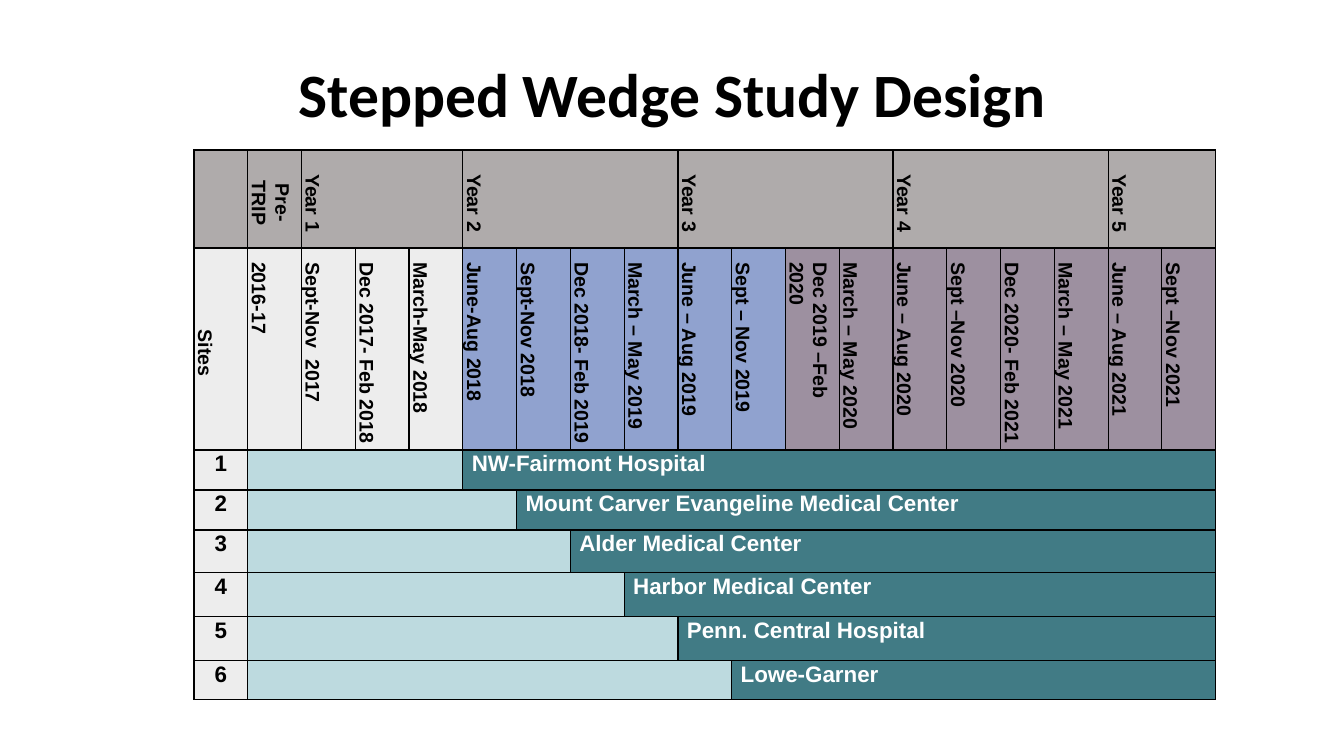
import pptx
import pptx.dml.color
import pptx.enum.text
import pptx.oxml
import pptx.oxml.ns
import pptx.util

PX = 914400 / 100.8
ALIGN = pptx.enum.text.PP_ALIGN
ANCHOR = pptx.enum.text.MSO_ANCHOR
COLORS = {
    "black": "000000", "white": "FFFFFF", "year": "AFABAB", "plain": "EDEDED",
    "rollout": "90A2CF", "followup": "9D90A0", "control": "BDDADF", "active": "417B85",
}

# First column, label and column count of each header group
YEARS = [(0, "", 1), (1, "Pre-TRIP", 1), (2, "Year 1", 3), (5, "Year 2", 4),
         (9, "Year 3", 4), (13, "Year 4", 4), (17, "Year 5", 2)]
PERIODS = [
    ("plain", ["Sites", "2016-17", "Sept-Nov  2017", "Dec 2017- Feb 2018",
               "March-May 2018"]),
    ("rollout", ["June-Aug 2018", "Sept-Nov 2018", "Dec 2018- Feb 2019",
                 "March – May 2019", "June – Aug 2019", "Sept – Nov 2019"]),
    ("followup", ["Dec 2019 –Feb 2020", "March – May 2020", "June – Aug 2020",
                  "Sept –Nov 2020", "Dec 2020- Feb 2021", "March – May 2021",
                  "June – Aug 2021", "Sept –Nov 2021"]),
]
SITES = ["NW-Fairmont Hospital", "Mount Carver Evangeline Medical Center",
         "Alder Medical Center", "Harbor Medical Center",
         "Penn. Central Hospital", "Lowe-Garner"]
COLUMNS = 19
FIRST_STEP = 5
ROW_HEIGHTS = [98, 202, 40, 40, 43, 44, 44, 39]


def emu(px):
    return pptx.util.Emu(round(px * PX))


def rgb(name):
    return pptx.dml.color.RGBColor.from_string(COLORS[name])


def add_span(para, text, size, color="black", font="Arial"):
    span = para.add_run()
    span.text = text
    span.font.size = pptx.util.Pt(size)
    span.font.name = font
    span.font.bold = True
    span.font.color.rgb = rgb(color)


def add_title(page, left, top, width, height):
    box = page.shapes.add_textbox(emu(left), emu(top), emu(width), emu(height))
    frame = box.text_frame
    frame.word_wrap = True
    frame.vertical_anchor = ANCHOR.MIDDLE
    para = frame.paragraphs[0]
    para.alignment = ALIGN.CENTER
    para.line_spacing = 0.9
    add_span(para, "Stepped Wedge Study Design", 44, font="Calibri")


def style_cell(cell):
    cell.margin_left = cell.margin_right = emu(6)
    cell.margin_top = cell.margin_bottom = 0
    properties = cell._tc.get_or_add_tcPr()
    for side in ("lnL", "lnR", "lnT", "lnB"):
        properties.append(pptx.oxml.parse_xml(
            f'<a:{side} {pptx.oxml.ns.nsdecls("a")} w="12700"><a:solidFill>'
            f'<a:srgbClr val="{COLORS["black"]}"/></a:solidFill></a:{side}>'))


def fill_cells(table, row, column, count, fill, text="", size=14, color="black",
               align=ALIGN.LEFT, indent=0, vertical=False, anchor=ANCHOR.TOP):
    for offset in range(count):
        cell = table.cell(row, column + offset)
        cell.fill.solid()
        cell.fill.fore_color.rgb = rgb(fill)
    cell = table.cell(row, column)
    if count > 1:
        cell.merge(table.cell(row, column + count - 1))
    if not text:
        return
    cell.vertical_anchor = anchor
    if vertical:
        cell._tc.get_or_add_tcPr().set("vert", "vert")
    para = cell.text_frame.paragraphs[0]
    para.alignment = align
    para.line_spacing = 1.07
    para._p.get_or_add_pPr().set("marL", str(emu(indent)))
    add_span(para, text, size, color)


def add_schedule(page, left, top, width, height):
    frame = page.shapes.add_table(len(ROW_HEIGHTS), COLUMNS, emu(left), emu(top),
                                  emu(width), emu(height))
    table = frame.table
    table.first_row = table.horz_banding = False
    for column in table.columns:
        column.width = emu(width / COLUMNS)
    for row, row_height in zip(table.rows, ROW_HEIGHTS):
        row.height = emu(row_height)
    for cell in table.iter_cells():
        style_cell(cell)

    # Year header
    for column, label, count in YEARS:
        fill_cells(table, 0, column, count, "year", label, align=ALIGN.CENTER,
                   indent=8, vertical=True, anchor=ANCHOR.MIDDLE)

    # Period header
    periods = [(fill, label) for fill, labels in PERIODS for label in labels]
    for column, (fill, label) in enumerate(periods):
        fill_cells(table, 1, column, 1, fill, label, indent=8, vertical=True,
                   align=ALIGN.LEFT if column else ALIGN.CENTER)

    # Each site starts one period after the site above
    for index, site in enumerate(SITES):
        row, start = index + 2, FIRST_STEP + index
        fill_cells(table, row, 0, 1, "plain", str(index + 1), 16, align=ALIGN.CENTER)
        fill_cells(table, row, 1, start - 1, "control")
        fill_cells(table, row, start, COLUMNS - start, "active", site, 16, "white",
                   indent=3)


def main():
    deck = pptx.Presentation()
    deck.slide_width, deck.slide_height = emu(1344), emu(756)
    page = deck.slides.add_slide(deck.slide_layouts[6])
    add_title(page, 93, 25, 1159, 145)
    add_schedule(page, 194, 150, 1022, sum(ROW_HEIGHTS))
    deck.save("out.pptx")


if __name__ == "__main__":
    main()
